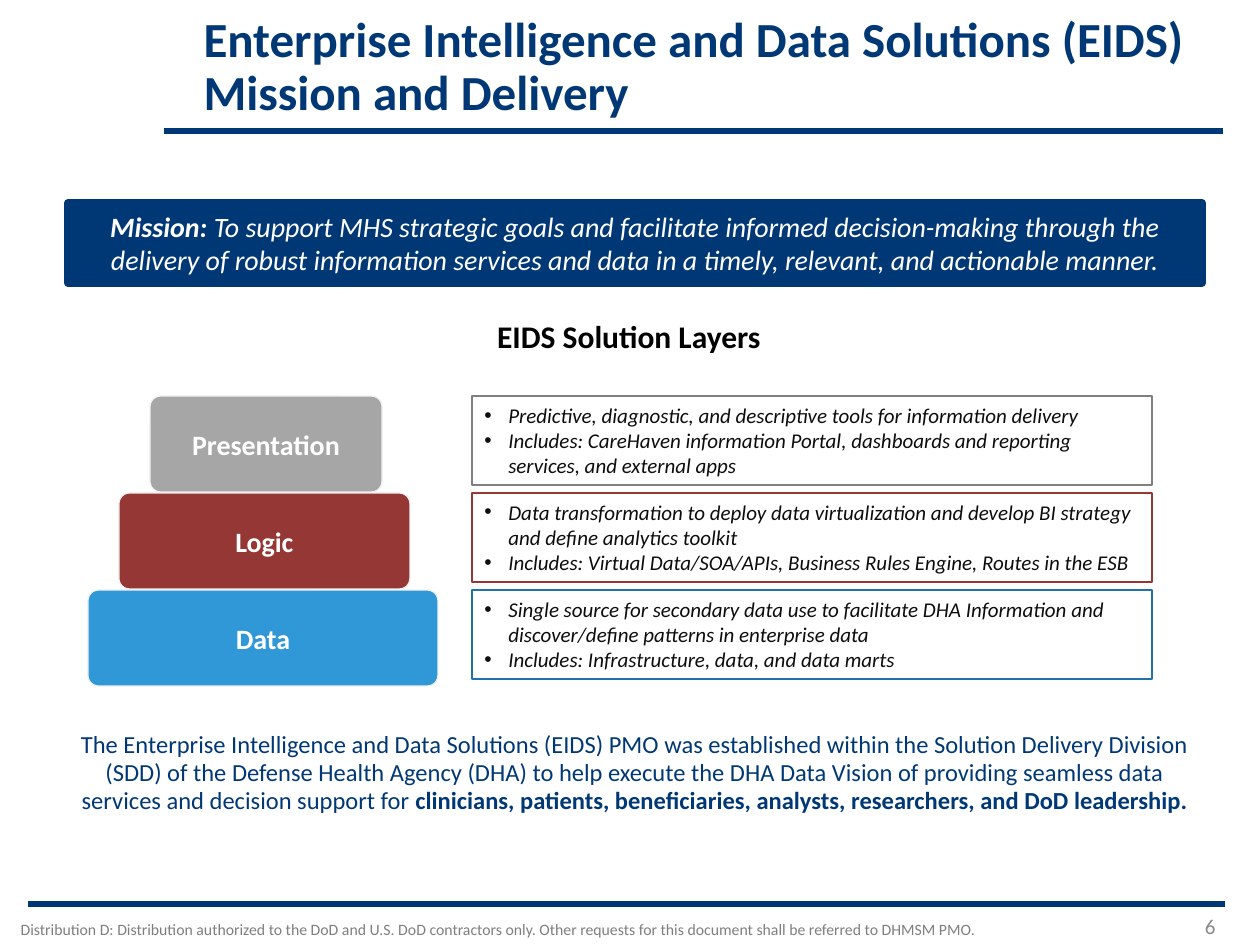
from pptx import Presentation
from pptx.dml.color import RGBColor
from pptx.enum.shapes import MSO_CONNECTOR as Conn, MSO_SHAPE as Shape
from pptx.enum.text import MSO_ANCHOR as Anchor, MSO_AUTO_SIZE as Auto, PP_ALIGN as Align
from pptx.oxml.ns import qn
from pptx.util import Pt
from lxml.etree import SubElement as Sub

SCALE = 914400 / 126
NAVY = "003876"
LAYERS = [
    ("Presentation", "A6A6A6", "808080", [
        "Predictive, diagnostic, and descriptive tools for information delivery",
        "Includes: CareHaven information Portal, dashboards and reporting services, and external apps"]),
    ("Logic", "953735", "953735", [
        "Data transformation to deploy data virtualization and develop BI strategy and define analytics toolkit",
        "Includes: Virtual Data/SOA/APIs, Business Rules Engine, Routes in the ESB"]),
    ("Data", "3198D7", "2073A6", [
        "Single source for secondary data use to facilitate DHA Information and discover/define patterns in enterprise data",
        "Includes: Infrastructure, data, and data marts"]),
]


def px(n):
    return round(n * SCALE)


def color(code):
    return RGBColor.from_string(code)


def mark(para, bullet):
    props = para._p.get_or_add_pPr()
    indent = px(24) if bullet else 0
    props.set("marL", str(indent))
    props.set("indent", str(-indent))
    if bullet:
        Sub(props, qn("a:buFont")).set("typeface", "Arial")
        Sub(props, qn("a:buChar")).set("char", "•")
    else:
        Sub(props, qn("a:buNone"))


def write(shape, *paras, size, ink, bold=False, italic=False, align=Align.LEFT,
          anchor=Anchor.TOP, spacing=1.0, bullet=False):
    frame = shape.text_frame
    frame.word_wrap = True
    frame.auto_size = Auto.NONE
    frame.vertical_anchor = anchor
    for i, runs in enumerate(paras):
        para = frame.add_paragraph() if i else frame.paragraphs[0]
        mark(para, bullet)
        para.alignment = align
        para.line_spacing = spacing
        para.space_before = Pt(0)
        for text, heavy in [(runs, bold)] if isinstance(runs, str) else runs:
            run = para.add_run()
            run.text = text
            font = run.font
            font.name, font.size = "Calibri", Pt(size)
            font.bold, font.italic = heavy, italic
            font.color.rgb = color(ink)


def place(shape, x, y, w, h):
    shape.left, shape.top, shape.width, shape.height = map(px, (x, y, w, h))
    return shape


def label(slide, x, y, w, h, text, **form):
    write(slide.shapes.add_textbox(*map(px, (x, y, w, h))), text, **form)


def block(slide, kind, x, y, w, h, fill, edge, weight):
    shape = slide.shapes.add_shape(kind, *map(px, (x, y, w, h)))
    shape.shadow.inherit = False
    if fill:
        shape.fill.solid()
        shape.fill.fore_color.rgb = color(fill)
    else:
        shape.fill.background()
    shape.line.color.rgb = color(edge)
    shape.line.width = Pt(weight)
    return shape


def rule(slide, x, y, end):
    line = slide.shapes.add_connector(Conn.STRAIGHT, px(x), px(y), px(end), px(y))
    line.line.color.rgb = color(NAVY)
    line.line.width = Pt(3)
    Sub(line._element.spPr, qn("a:effectLst"))


def layer(slide, i, name, fill, edge, points):
    top = 396 + 97 * i
    bar = block(slide, Shape.ROUNDED_RECTANGLE, 150 - 31 * i, top,
                232 + 59 * i, 96, fill, "F2F2F2", 0.75)
    bar.adjustments[0] = 0.11
    write(bar, name, size=16, ink="FFFFFF", bold=True,
          align=Align.CENTER, anchor=Anchor.MIDDLE)
    box = block(slide, Shape.RECTANGLE, 472, top, 680, 89, None, edge, 1.5)
    write(box, *points, size=12, ink="0D0D0D", italic=True, bullet=True)


def main():
    deck = Presentation()
    deck.slide_width, deck.slide_height = px(1260), px(945)
    slide = deck.slides.add_slide(deck.slide_layouts[1])
    rule(slide, 28, 904, 1225)
    rule(slide, 164, 131, 1223)
    write(place(slide.shapes.title, 191, 1, 1032, 126),
          "Enterprise Intelligence and Data Solutions (EIDS) Mission and Delivery",
          size=28, ink=NAVY, bold=True, anchor=Anchor.BOTTOM, spacing=0.9)
    mission = block(slide, Shape.RECTANGLE, 68, 203, 1134, 80, NAVY, NAVY, 4.5)
    write(mission, [
        ("Mission: ", True),
        ("To support MHS strategic goals and facilitate informed decision-making through the "
         "delivery of robust information services and data in a timely, relevant, and "
         "actionable manner.", False)],
        size=16, ink="FFFFFF", italic=True, align=Align.CENTER)
    label(slide, 62, 311, 1134, 45, "EIDS Solution Layers",
          size=18, ink="000000", bold=True, align=Align.CENTER)
    for i, row in enumerate(LAYERS):
        layer(slide, i, *row)
    write(place(slide.placeholders[1], 68, 725, 1134, 100), [
        ("The Enterprise Intelligence and Data Solutions (EIDS) PMO was established within the "
         "Solution Delivery Division (SDD) of the Defense Health Agency (DHA) to help execute "
         "the DHA Data Vision of providing seamless data services and decision support for ", False),
        ("clinicians, patients, beneficiaries, analysts, researchers, and DoD leadership.", True)],
        size=14, ink=NAVY, align=Align.CENTER, spacing=0.95)
    label(slide, 0, 914, 995, 31,
          "Distribution D: Distribution authorized to the DoD and U.S. DoD contractors only. "
          "Other requests for this document shall be referred to DHMSM PMO.",
          size=9, ink="7F7F7F", align=Align.CENTER)
    label(slide, 1081, 895, 147, 50, "6", size=12, ink="898989",
          align=Align.RIGHT, anchor=Anchor.BOTTOM)
    deck.save("out.pptx")


if __name__ == "__main__":
    main()
